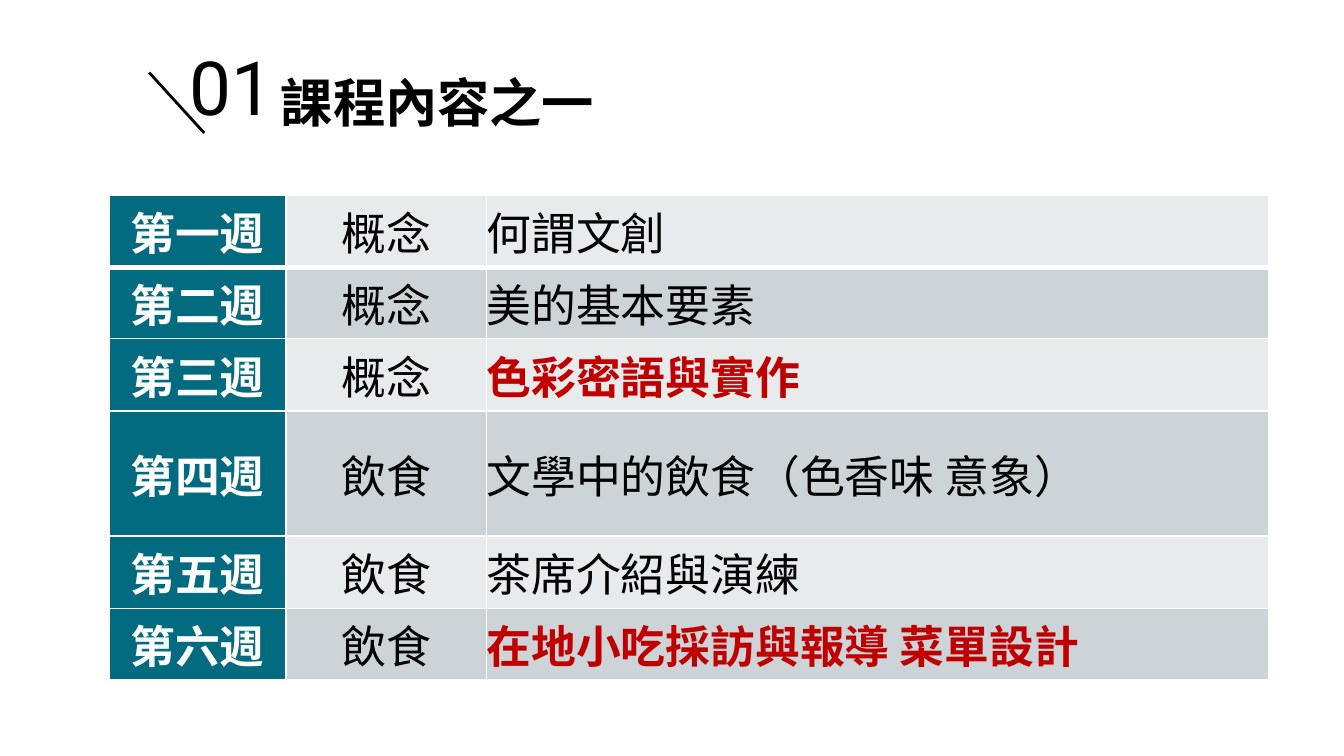
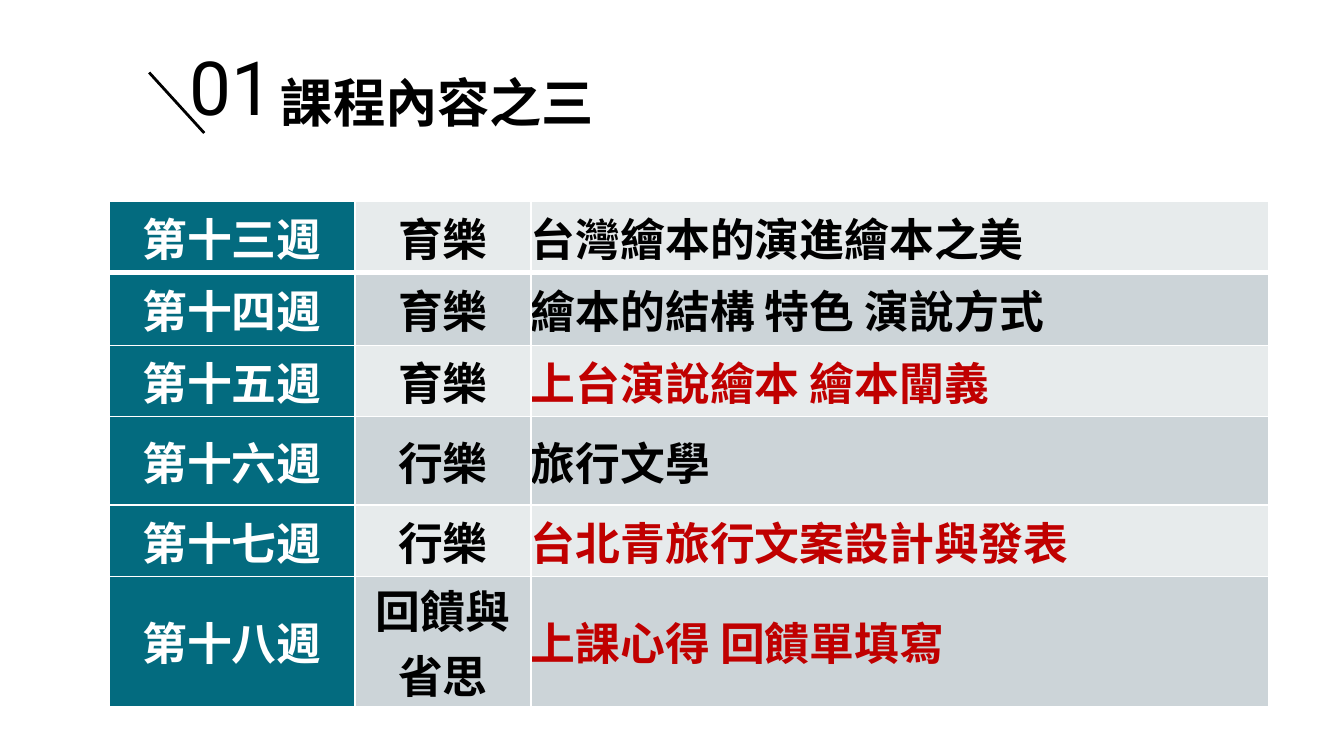
from lxml import etree
from pptx import Presentation
from pptx.dml.color import RGBColor
from pptx.enum import shapes, text
from pptx.oxml import ns
from pptx.util import Inches, Pt

COLORS = {
    "ink": "000000",
    "white": "FFFFFF",
    "teal": "036B7F",
    "light": "E7EBEC",
    "grey": "CCD4D8",
    "red": "C00000",
}
CJK, ARIAL = "Noto Sans CJK SC", "Arial"

# Each week: label, theme, topic, highlighted
COURSES = [
    {
        "number": "01",
        "heading": "課程內容之一",
        "top": 1.45,
        "columns": [1.32, 1.49, 5.82],
        "heights": [0.54, 0.53, 0.54, 0.93, 0.54, 0.53],
        "bold": False,
        "font": CJK,
        "other_font": ARIAL,
        "other_texts": ["文學中的飲食（色香味 意象）", "在地小吃採訪與報導 菜單設計"],
        "weeks": [
            ("第一週", "概念", "何謂文創", False),
            ("第二週", "概念", "美的基本要素", False),
            ("第三週", "概念", "色彩密語與實作", True),
            ("第四週", "飲食", "文學中的飲食（色香味 意象）", False),
            ("第五週", "飲食", "茶席介紹與演練", False),
            ("第六週", "飲食", "在地小吃採訪與報導 菜單設計", True),
        ],
    },
    {
        "number": "01",
        "heading": "課程內容之三",
        "top": 1.5,
        "columns": [1.83, 1.31, 5.49],
        "heights": [0.53, 0.54, 0.53, 0.66, 0.53, 0.53],
        "bold": True,
        "font": ARIAL,
        "other_font": CJK,
        "other_texts": ["行樂"],
        "weeks": [
            ("第十三週", "育樂", "台灣繪本的演進繪本之美", False),
            ("第十四週", "育樂", "繪本的結構 特色 演說方式", False),
            ("第十五週", "育樂", "上台演說繪本 繪本闡義", True),
            ("第十六週", "行樂", "旅行文學", False),
            ("第十七週", "行樂", "台北青旅行文案設計與發表", True),
            ("第十八週", "回饋與省思", "上課心得 回饋單填寫", True),
        ],
    },
]


def rgb(name):
    return RGBColor.from_string(COLORS[name])


def write(frame, words, size, font, color="ink", bold=False, centred=True):
    frame.text = words
    paragraph = frame.paragraphs[0]
    paragraph.alignment = text.PP_ALIGN.CENTER if centred else text.PP_ALIGN.LEFT
    style = paragraph.font
    style.size, style.name, style.bold = Pt(size), font, bold
    style.color.rgb = rgb(color)
    # East Asian typeface for the Chinese characters
    latin = paragraph._p.find(".//" + ns.qn("a:latin"))
    latin.addnext(latin.makeelement(ns.qn("a:ea"), {"typeface": CJK}))


def set_box(frame, anchor):
    frame.word_wrap = True
    frame.auto_size = text.MSO_AUTO_SIZE.NONE
    frame.vertical_anchor = anchor
    frame.margin_left = frame.margin_right = Inches(0.1)
    frame.margin_top = frame.margin_bottom = Inches(0.1)


def add_borders(cell, row):
    widths = {"L": 1, "R": 1, "T": 3 if row == 1 else 1, "B": 3 if row == 0 else 1}
    for index, (side, width) in enumerate(widths.items()):
        line = etree.Element(ns.qn("a:ln" + side), w=str(Pt(width)))
        fill = etree.SubElement(line, ns.qn("a:solidFill"))
        etree.SubElement(fill, ns.qn("a:srgbClr"), val=COLORS["white"])
        cell._tc.get_or_add_tcPr().insert(index, line)


def add_heading(slide, course):
    # Slanted stroke beside the number
    stroke = slide.shapes.add_connector(
        shapes.MSO_CONNECTOR.STRAIGHT,
        Inches(1.11), Inches(0.54), Inches(1.52), Inches(0.99))
    stroke.line.color.rgb = rgb("ink")
    stroke.line.width = Pt(1.5)
    etree.SubElement(stroke._element.spPr, ns.qn("a:effectLst"))

    # Section number
    number = slide.shapes.title
    number.left, number.top = Inches(0.81), Inches(0.22)
    number.width, number.height = Inches(1.82), Inches(0.85)
    set_box(number.text_frame, text.MSO_ANCHOR.BOTTOM)
    write(number.text_frame, course["number"], 40, "Roboto")

    # Section name
    heading = slide.shapes.add_textbox(
        Inches(1.73), Inches(0.44), Inches(3.05), Inches(0.63))
    set_box(heading.text_frame, text.MSO_ANCHOR.MIDDLE)
    write(heading.text_frame, course["heading"], 28, CJK, bold=True)


def add_schedule(slide, course):
    weeks, columns, heights = course["weeks"], course["columns"], course["heights"]
    schedule = slide.shapes.add_table(
        len(weeks), len(columns), Inches(0.81), Inches(course["top"]),
        Inches(sum(columns)), Inches(sum(heights))).table
    for column, width in zip(schedule.columns, columns):
        column.width = Inches(width)
    for row, height in zip(schedule.rows, heights):
        row.height = Inches(height)

    for row, (week, theme, topic, highlighted) in enumerate(weeks):
        band = "grey" if row % 2 else "light"
        entries = [
            (week, "teal", "white", True),
            (theme, band, "ink", course["bold"]),
            (topic, band, "red" if highlighted else "ink", course["bold"] or highlighted),
        ]
        for col, (words, fill, color, bold) in enumerate(entries):
            cell = schedule.cell(row, col)
            cell.margin_left = cell.margin_right = 0
            cell.margin_top = cell.margin_bottom = 0
            cell.vertical_anchor = text.MSO_ANCHOR.MIDDLE
            cell.fill.solid()
            cell.fill.fore_color.rgb = rgb(fill)
            add_borders(cell, row)
            other = words in course["other_texts"]
            font = CJK if col == 0 else course["other_font" if other else "font"]
            write(cell.text_frame, words, 24, font, color, bold, centred=col < 2)


def main():
    deck = Presentation()
    # Widescreen, 16:9
    deck.slide_width = Inches(10)
    deck.slide_height = deck.slide_width * 9 // 16
    title_only = deck.slide_layouts[5]
    for course in COURSES:
        slide = deck.slides.add_slide(title_only)
        add_heading(slide, course)
        add_schedule(slide, course)
    deck.save("out.pptx")


if __name__ == "__main__":
    main()
